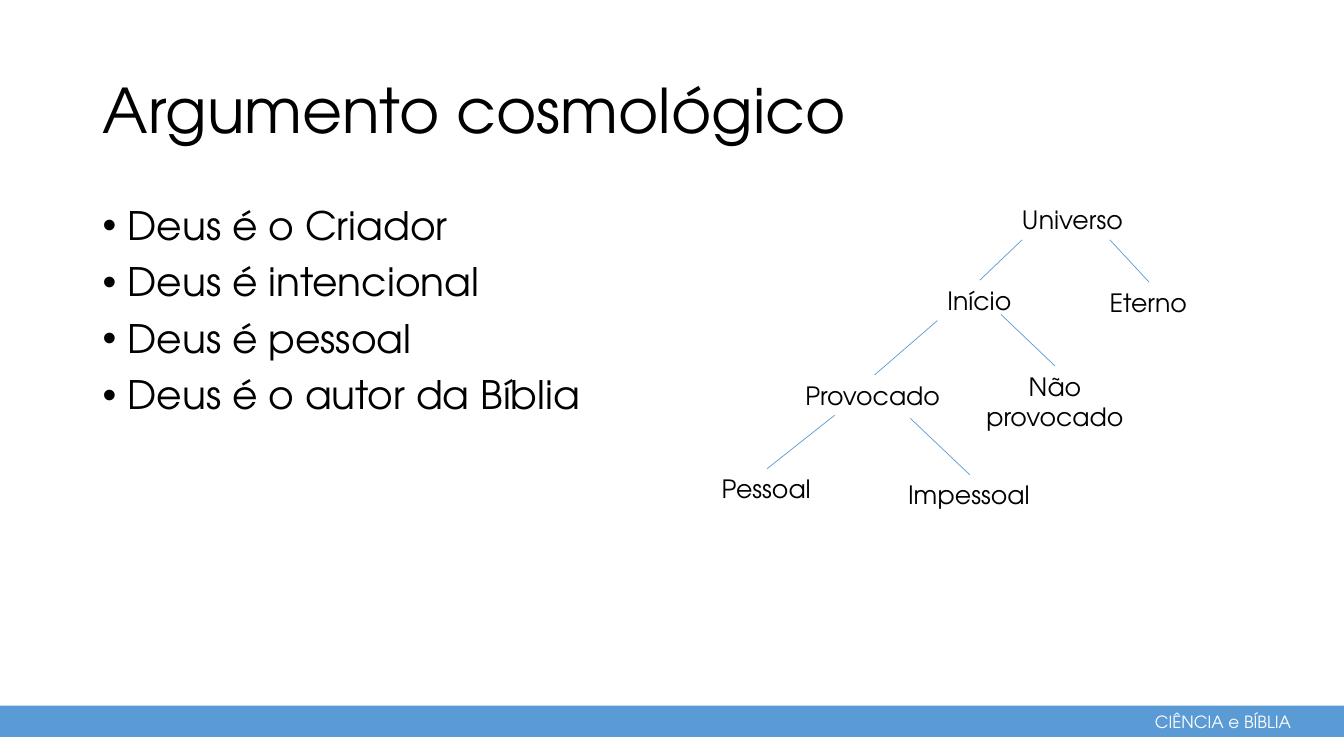
from dataclasses import dataclass

from lxml import etree
from pptx import Presentation
from pptx import util as u
from pptx.dml.color import RGBColor
from pptx.enum import shapes, text
from pptx.oxml.ns import qn

COLORS = {"blue": "5B9BD5", "black": "000000", "white": "FFFFFF"}
FONT = "TeX Gyre Adventor"
WIDTH, HEIGHT = u.Inches(13.33), u.Inches(7.5)


def across(percent: float) -> int:
    return round(WIDTH * percent / 100)


def down(percent: float) -> int:
    return round(HEIGHT * percent / 100)


@dataclass(frozen=True)
class TextBlock:
    lines: tuple[str, ...]
    left: float
    top: float
    width: float
    height: float = 5.33
    size: int = 18
    color: str = "black"
    wrap: bool = False
    middle: bool = False
    centered: bool = False
    bullets: bool = False
    line_spacing: float = 1.0
    space_before: int = 0


@dataclass(frozen=True)
class Branch:
    left: float
    top: float
    child: str


TITLE = TextBlock(("Argumento cosmológico",), 6.9, 5.33, 86.25, 19.33, size=44,
                  wrap=True, middle=True, line_spacing=0.9)
BODY = TextBlock(("Deus é o Criador", "Deus é intencional", "Deus é pessoal",
                  "Deus é o autor da Bíblia"), 6.9, 26.67, 43.13, 63.47, size=28,
                 wrap=True, bullets=True, line_spacing=0.9, space_before=10)
FOOTER = TextBlock(("CIÊNCIA e BÍBLIA",), 85.2, 93.47, 11.78, 4, size=12, color="white")

NODES = (
    TextBlock(("Universo",), 75.3, 26.4, 9.15),
    TextBlock(("Início",), 69.75, 37.07, 6.3),
    TextBlock(("Eterno",), 81.83, 37.33, 7.35),
    TextBlock(("Provocado",), 59.18, 49.6, 11.78),
    TextBlock(("Não", "provocado"), 72.53, 48.4, 11.93, 9.47, centered=True),
    TextBlock(("Pessoal",), 52.95, 62, 8.25),
    TextBlock(("Impessoal",), 66.83, 62.8, 10.65),
)
BRANCHES = (
    Branch(76.05, 31.73, "Início"),
    Branch(82.58, 31.73, "Eterno"),
    Branch(69.75, 42.4, "Provocado"),
    Branch(74.48, 41.6, "Não"),
    Branch(62.1, 54.93, "Pessoal"),
    Branch(67.73, 55.33, "Impessoal"),
)


def add_bullet(para) -> None:
    properties = para._p.get_or_add_pPr()
    properties.set("marL", str(u.Inches(0.25)))
    properties.set("indent", str(-u.Inches(0.25)))
    etree.SubElement(properties, qn("a:buFont")).set("typeface", "Arial")
    etree.SubElement(properties, qn("a:buChar")).set("char", "•")


def add_text(container, block: TextBlock):
    box = container.add_textbox(across(block.left), down(block.top),
                                across(block.width), down(block.height))
    frame = box.text_frame
    frame.word_wrap = block.wrap
    frame.auto_size = (text.MSO_AUTO_SIZE.NONE if block.wrap
                       else text.MSO_AUTO_SIZE.SHAPE_TO_FIT_TEXT)
    frame.vertical_anchor = text.MSO_ANCHOR.MIDDLE if block.middle else text.MSO_ANCHOR.TOP
    for index, line in enumerate(block.lines):
        para = frame.add_paragraph() if index else frame.paragraphs[0]
        if block.bullets:
            add_bullet(para)
        para.alignment = text.PP_ALIGN.CENTER if block.centered else text.PP_ALIGN.LEFT
        para.line_spacing = block.line_spacing
        if index and block.space_before:
            para.space_before = u.Pt(block.space_before)
        span = para.add_run()
        span.text = line
        span.font.name = FONT
        span.font.size = u.Pt(block.size)
        span.font.color.rgb = RGBColor.from_string(COLORS[block.color])
    return box


def add_branch(container, branch: Branch, child) -> None:
    line = container.add_connector(
        shapes.MSO_CONNECTOR.STRAIGHT, across(branch.left), down(branch.top),
        child.left + child.width // 2, child.top)
    line.end_connect(child, 0)
    line.line.color.rgb = RGBColor.from_string(COLORS["blue"])
    line.line.width = u.Pt(0.5)
    etree.SubElement(line._element.spPr, qn("a:effectLst"))


def add_footer_bar(page) -> None:
    bar = page.shapes.add_shape(shapes.MSO_SHAPE.RECTANGLE, 0, down(93.33),
                                WIDTH, down(4.13))
    bar.shadow.inherit = False
    bar.fill.solid()
    bar.fill.fore_color.rgb = RGBColor.from_string(COLORS["blue"])
    bar.line.fill.background()


def main() -> None:
    deck = Presentation()
    deck.slide_width, deck.slide_height = WIDTH, HEIGHT
    page = deck.slides.add_slide(deck.slide_layouts[6])
    add_footer_bar(page)
    for block in (FOOTER, TITLE, BODY):
        add_text(page.shapes, block)
    tree = page.shapes.add_group_shape().shapes
    boxes = {node.lines[0]: add_text(tree, node) for node in NODES}
    for branch in BRANCHES:
        add_branch(tree, branch, boxes[branch.child])
    deck.save("out.pptx")


if __name__ == "__main__":
    main()
